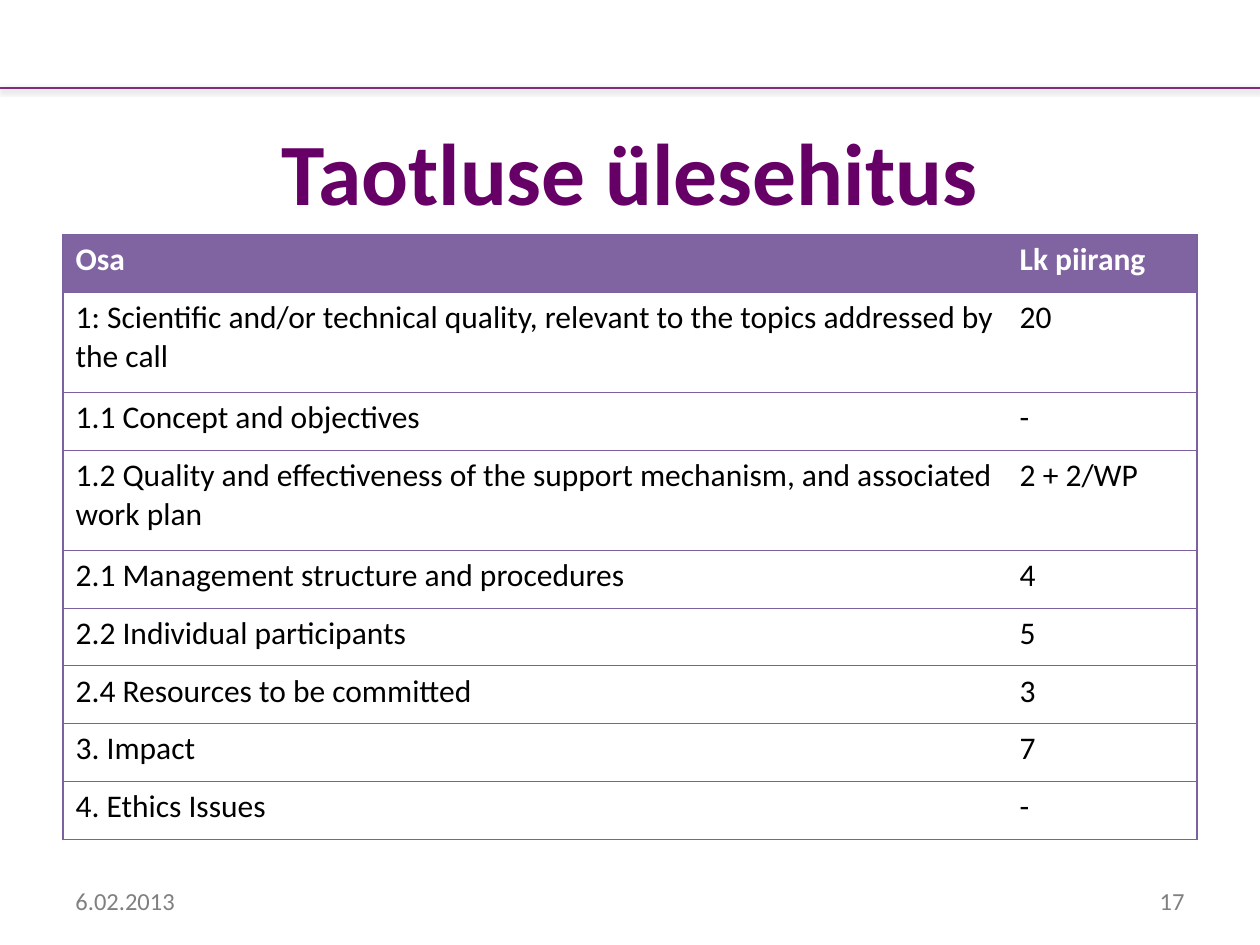
import pptx
import pptx.dml.color
import pptx.enum.shapes
import pptx.enum.text
import pptx.oxml
import pptx.oxml.ns
import pptx.util
from dataclasses import dataclass

Pt = pptx.util.Pt
ALIGN = pptx.enum.text.PP_ALIGN
ANCHOR = pptx.enum.text.MSO_ANCHOR

TITLE = "Taotluse ülesehitus"
HEADER = ("Osa", "Lk piirang")
SECTIONS = [
    ("1: Scientific and/or technical quality, relevant to the topics addressed by the call", "20"),
    ("1.1 Concept and objectives", "-"),
    ("1.2 Quality and effectiveness of the support mechanism, and associated work plan", "2 + 2/WP"),
    ("2.1 Management structure and procedures", "4"),
    ("2.2 Individual participants", "5"),
    ("2.4 Resources to be committed", "3"),
    ("3. Impact", "7"),
    ("4. Ethics Issues", "-"),
]
DATE, PAGE = "6.02.2013", "17"


@dataclass(frozen=True)
class Theme:
    font: str = "Calibri"
    title: str = "660066"
    rule: str = "832B7C"
    header: str = "8064A2"
    border: str = "7D60A0"
    text: str = "000000"
    on_header: str = "FFFFFF"
    muted: str = "808080"
    title_size: float = 50
    body_size: float = 18
    footer_size: float = 14


THEME = Theme()
WIDTH, HEIGHT, MARGIN = 720, 540, 36
CONTENT_WIDTH = WIDTH - 2 * MARGIN
RULE_Y, TABLE_TOP = 50.4, 134.1
COLUMN_WIDTHS = (539.5, CONTENT_WIDTH - 539.5)
ROW_HEIGHT, TALL_ROW_HEIGHT = 33.05, 57.15
LINE_CHARS = 70
FOOTER_TOP, FOOTER_WIDTH, FOOTER_HEIGHT = 500.5, 168, 28.75


def rgb(value):
    return pptx.dml.color.RGBColor.from_string(value)


def xml(text):
    return pptx.oxml.parse_xml(text.replace(">", " " + pptx.oxml.ns.nsdecls("a") + ">", 1))


def write(tf, text, *, size, color, bold=False, align=ALIGN.LEFT):
    p = tf.paragraphs[0]
    p.alignment = align
    r = p.add_run()
    r.text = text
    r.font.name, r.font.size, r.font.bold = THEME.font, Pt(size), bold
    r.font.color.rgb = rgb(color)


def place(sp, left, top, width, height):
    sp.left, sp.top, sp.width, sp.height = map(Pt, (left, top, width, height))


def add_rule(s):
    """Full-width line with a soft shadow beneath it."""
    line = s.shapes.add_connector(
        pptx.enum.shapes.MSO_CONNECTOR.STRAIGHT, 0, Pt(RULE_Y), Pt(WIDTH), Pt(RULE_Y))
    line.line.color.rgb = rgb(THEME.rule)
    line.line.width = Pt(1)
    line._element.spPr.append(xml(
        f'<a:effectLst><a:outerShdw blurRad="{Pt(3.1)}" dist="{Pt(1)}" dir="5400000" '
        'rotWithShape="0"><a:srgbClr val="000000"><a:alpha val="25000"/></a:srgbClr>'
        '</a:outerShdw></a:effectLst>'))


def add_title(s):
    sp = s.shapes.title
    place(sp, MARGIN, 66.25, CONTENT_WIDTH, 62.65)
    tf = sp.text_frame
    tf.vertical_anchor = ANCHOR.MIDDLE
    tf.auto_size = pptx.enum.text.MSO_AUTO_SIZE.NONE
    write(tf, TITLE, size=THEME.title_size, color=THEME.title, bold=True, align=ALIGN.CENTER)


def set_borders(cell, sides):
    """Draw the named sides and clear the others."""
    tcPr = cell._tc.get_or_add_tcPr()
    for side in "LRTB":
        fill = (f'<a:solidFill><a:srgbClr val="{THEME.border}"/></a:solidFill>'
                if side in sides else '<a:noFill/>')
        tcPr.append(xml(f'<a:ln{side} w="{Pt(0.75)}">{fill}</a:ln{side}>'))


def add_section_table(s):
    rows = [HEADER, *SECTIONS]
    heights = [TALL_ROW_HEIGHT if len(name) > LINE_CHARS else ROW_HEIGHT for name, _ in rows]
    table = s.shapes.add_table(
        len(rows), len(HEADER), Pt(MARGIN), Pt(TABLE_TOP), Pt(CONTENT_WIDTH), Pt(sum(heights))).table
    table.horz_banding = False
    for column, width in zip(table.columns, COLUMN_WIDTHS):
        column.width = Pt(width)
    for i, (row, height) in enumerate(zip(rows, heights)):
        table.rows[i].height = Pt(height)
        is_header = i == 0
        for j, text in enumerate(row):
            cell = table.cell(i, j)
            set_borders(cell, "TB" + "LR"[j])
            if is_header:
                cell.fill.solid()
                cell.fill.fore_color.rgb = rgb(THEME.header)
            else:
                cell.fill.background()
            write(cell.text_frame, text, size=THEME.body_size, bold=is_header,
                  color=THEME.on_header if is_header else THEME.text)


def add_footer(s, text, left, align):
    sp = s.shapes.add_textbox(0, 0, 0, 0)
    place(sp, left, FOOTER_TOP, FOOTER_WIDTH, FOOTER_HEIGHT)
    tf = sp.text_frame
    tf.word_wrap = True
    tf.vertical_anchor = ANCHOR.MIDDLE
    write(tf, text, size=THEME.footer_size, color=THEME.muted, align=align)


def main():
    prs = pptx.Presentation()
    prs.slide_width, prs.slide_height = Pt(WIDTH), Pt(HEIGHT)
    s = prs.slides.add_slide(prs.slide_layouts.get_by_name("Title Only"))
    add_rule(s)
    add_title(s)
    add_section_table(s)
    add_footer(s, DATE, MARGIN, ALIGN.LEFT)
    add_footer(s, PAGE, WIDTH - MARGIN - FOOTER_WIDTH, ALIGN.RIGHT)
    prs.save("out.pptx")


if __name__ == "__main__":
    main()
